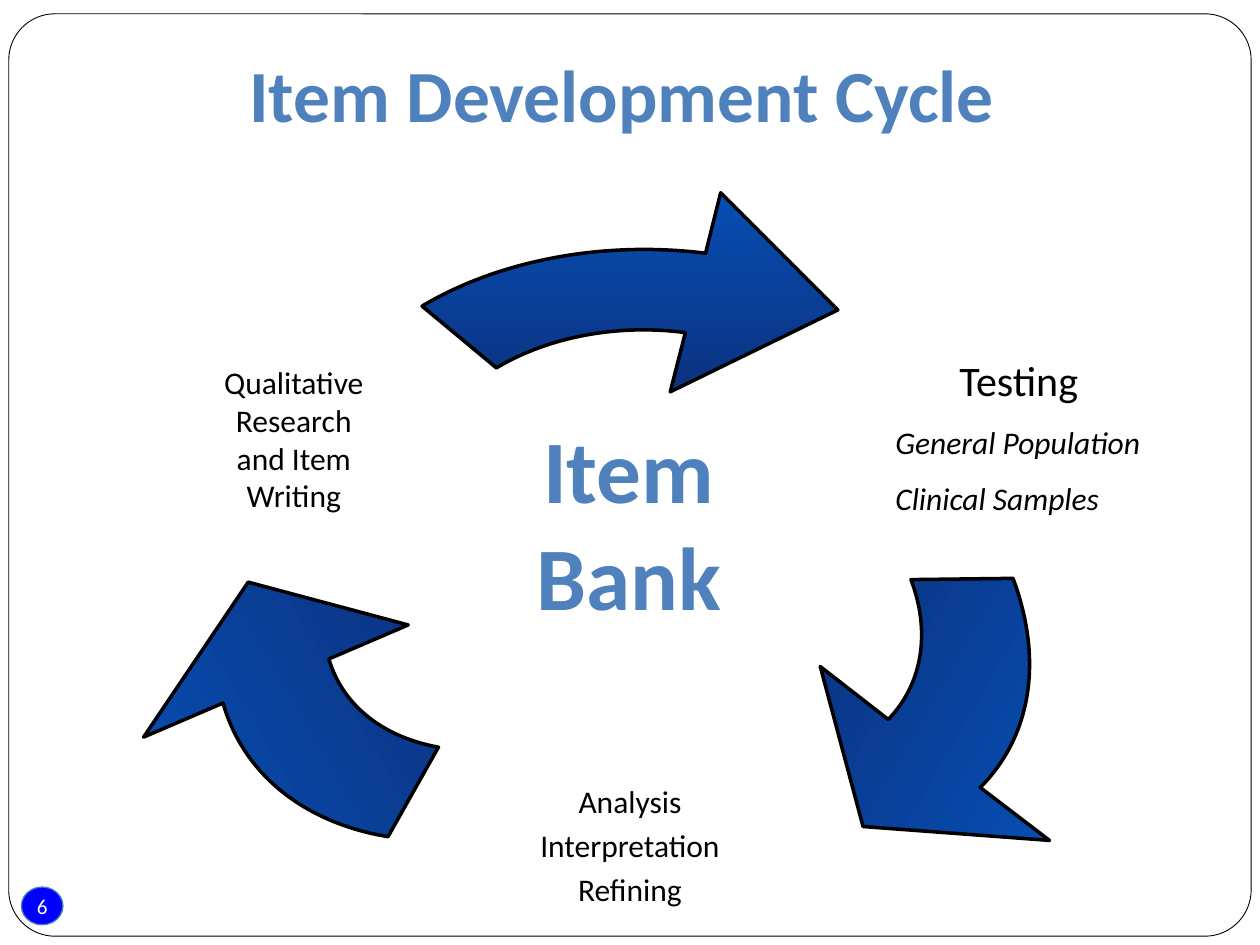
from lxml.etree import SubElement
from pptx import Presentation
from pptx.dml.color import RGBColor
from pptx.enum.shapes import MSO_SHAPE as Preset
from pptx.enum.text import MSO_ANCHOR as Anchor, PP_ALIGN as Align
from pptx.oxml.ns import qn
from pptx.util import Pt

PX = 9144
FONT = "Calibri"
COLORS = {
    "ink": "000000",
    "white": "FFFFFF",
    "heading": "4F81BD",
    "badge": "0000FF",
    "badge_line": "4B7EBC",
    "bright": "074EB3",
    "deep": "0B3280",
}


def color(name):
    """Return the named colour."""
    return RGBColor.from_string(COLORS[name])


def emu(*lengths):
    """Turn px lengths into EMU."""
    return [length * PX for length in lengths]


def outline(shape, name, width):
    """Draw the shape's line and drop its shadow."""
    shape.shadow.inherit = False
    shape.line.color.rgb = color(name)
    shape.line.width = Pt(width)


def write(shape, lines):
    """Fill a shape with vertically centred lines of text."""
    frame = shape.text_frame
    frame.word_wrap = True
    frame.vertical_anchor = Anchor.MIDDLE
    frame.margin_left = frame.margin_right = 0
    frame.margin_top = frame.margin_bottom = 0
    for index, line in enumerate(lines):
        para = frame.add_paragraph() if index else frame.paragraphs[0]
        para.alignment = line.get("align", Align.CENTER)
        para.space_before = Pt(line.get("before", 0))
        span = para.add_run()
        span.text = line["text"]
        span.font.name = FONT
        span.font.size = Pt(line.get("size", 18))
        span.font.bold = line.get("bold", False)
        span.font.italic = line.get("italic", False)
        span.font.color.rgb = color(line.get("color", "ink"))


def add_label(page, box, lines):
    """Place a text box."""
    write(page.shapes.add_textbox(*emu(*box)), lines)


def add_frame(page, box):
    """Place the rounded border of the page."""
    border = page.shapes.add_shape(Preset.ROUNDED_RECTANGLE, *emu(*box))
    border.adjustments[0] = 0.05
    border.fill.background()
    outline(border, "ink", 0.5)


def add_badge(page, box, number):
    """Place the page number in its ellipse."""
    badge = page.shapes.add_shape(Preset.OVAL, *emu(*box))
    badge.fill.solid()
    badge.fill.fore_color.rgb = color("badge")
    outline(badge, "badge_line", 0.75)
    write(badge, [{"text": number, "size": 12.1, "color": "white"}])


def bend(segments):
    """Join three straight segments into one cubic curve."""
    curve = SubElement(segments[0].getparent(), qn("a:cubicBezTo"))
    segments[0].addprevious(curve)
    for segment in segments:
        curve.append(segment[0])
        segment.getparent().remove(segment)


def add_arrow(page, corner, inner, outer, head, stops, angle):
    """Place a curved arrow whose points are relative to its corner."""
    left, top = corner
    points = [emu(left + x, top + y) for x, y in inner + outer + head]
    builder = page.shapes.build_freeform(*points[0])
    builder.add_line_segments(points[1:], close=True)
    arrow = builder.convert_to_shape()
    segments = list(arrow.element.iter(qn("a:lnTo")))
    bend(segments[:3])
    bend(segments[4:7])
    arrow.fill.gradient()
    arrow.fill.gradient_angle = angle
    for position, (stop, name) in enumerate(zip(arrow.fill.gradient_stops, stops)):
        stop.position = position
        stop.color.rgb = color(name)
    outline(arrow, "ink", 2)


def add_cycle(page):
    """Place the three arrows clockwise from the top."""
    add_arrow(page, (335, 153),
              [(209, 111), (156, 104), (101, 114), (59, 139)],
              [(0, 90), (62, 53), (145, 38), (225, 48)],
              [(237, 0), (330, 93), (197, 158)], ("bright", "deep"), 270)
    add_arrow(page, (651, 459),
              [(54, 112), (81, 84), (88, 43), (72, 1)],
              [(153, 0), (177, 64), (168, 125), (127, 166)],
              [(182, 208), (34, 197), (0, 70)], ("deep", "bright"), 330)
    add_arrow(page, (114, 462),
              [(147, 61), (158, 98), (190, 123), (234, 131)],
              [(194, 202), (127, 191), (79, 152), (63, 96)],
              [(0, 123), (83, 0), (210, 34)], ("bright", "deep"), 30)


def add_stages(page):
    """Place the text of the three stages."""
    sample = {"align": Align.LEFT, "before": 10.5, "italic": True}
    add_label(page, (705, 281, 207, 129), [
        {"text": "Testing", "size": 24, "before": 16.2},
        {"text": " General Population", **sample},
        {"text": " Clinical Samples", **sample},
    ])
    add_label(page, (428, 618, 144, 105), [
        {"text": text, "before": 3.5}
        for text in ("Analysis", "Interpretation ", "Refining")])
    add_label(page, (137, 252, 198, 192), [
        {"text": text}
        for text in ("Qualitative ", "Research ", "and Item ", "Writing ")])


def main():
    """Build the deck."""
    deck = Presentation()
    deck.slide_width, deck.slide_height = emu(1000, 750)
    page = deck.slides.add_slide(deck.slide_layouts[6])
    heading = {"bold": True, "color": "heading"}
    add_badge(page, (17, 704, 33, 30), "6")
    add_frame(page, (7, 11, 986, 732))
    add_cycle(page)
    add_stages(page)
    add_label(page, (357, 329, 284, 170),
              [{"text": "Item Bank", "size": 51, **heading}])
    add_label(page, (30, 24, 927, 99),
              [{"text": "Item Development Cycle", "size": 42, "before": 22.5, **heading}])
    deck.save("out.pptx")


if __name__ == "__main__":
    main()
